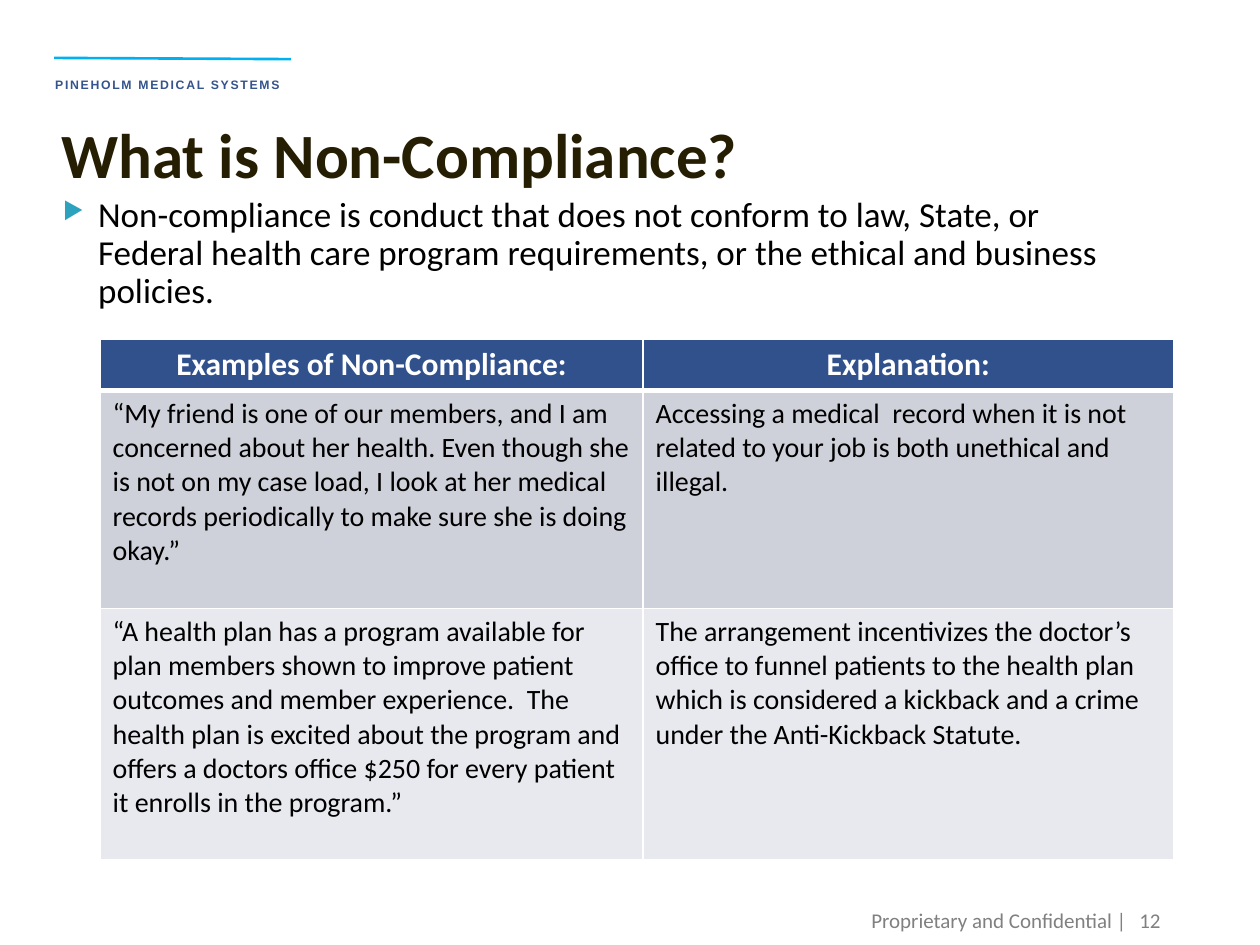
from lxml import etree
from pptx import Presentation
from pptx.dml.color import RGBColor
from pptx.enum.shapes import MSO_CONNECTOR
from pptx.enum.text import MSO_ANCHOR, PP_ALIGN
from pptx.oxml.ns import qn
from pptx.util import Pt

LEFT, CENTER, RIGHT = PP_ALIGN.LEFT, PP_ALIGN.CENTER, PP_ALIGN.RIGHT
TOP, MIDDLE = MSO_ANCHOR.TOP, MSO_ANCHOR.MIDDLE
STRAIGHT = MSO_CONNECTOR.STRAIGHT

WHITE = RGBColor(0xFF, 0xFF, 0xFF)
BLACK = RGBColor(0, 0, 0)
GRAY = RGBColor(0x80, 0x80, 0x80)
BRAND = RGBColor(0x35, 0x53, 0x8D)
SKY = RGBColor(0x00, 0xB0, 0xF0)
TEAL = RGBColor(0x2D, 0xA2, 0xBF)
TITLE = RGBColor(0x26, 0x1E, 0x03)
NAVY = RGBColor(0x31, 0x51, 0x8C)
ROW_DARK = RGBColor(0xCE, 0xD0, 0xDA)
ROW_LIGHT = RGBColor(0xE8, 0xE9, 0xEE)


def write(tf, text, size, color, bold=False, align=LEFT, name="Calibri"):
    p = tf.paragraphs[0]
    p.alignment = align
    r = p.add_run()
    r.text = text
    fmt = {"size": Pt(size), "bold": bold, "name": name}
    for key, value in fmt.items():
        setattr(r.font, key, value)
    r.font.color.rgb = color
    return p


def add_text(box, text, size, color, anchor=TOP, wrap=True, **fmt):
    tf = s.shapes.add_textbox(*(Pt(v) for v in box)).text_frame
    tf.word_wrap = wrap
    tf.vertical_anchor = anchor
    return write(tf, text, size, color, **fmt)


prs = Presentation()
prs.slide_width, prs.slide_height = Pt(720), Pt(540)
s = prs.slides.add_slide(prs.slide_layouts[6])

# Company name with accent line
p = add_text((24.5, 33.1, 147, 21), "PINEHOLM MEDICAL SYSTEMS", 7, BRAND,
             wrap=False, bold=True, name="Arial")
p.line_spacing = Pt(16)
p.runs[0].font._element.set("spc", "100")
line = s.shapes.add_connector(STRAIGHT, Pt(31), Pt(33.1), Pt(166.3), Pt(33.8))
line.line.color.rgb = SKY
line.line.width = Pt(1.5)
etree.SubElement(line._element.spPr, qn("a:effectLst"))

# Footer and page number
for left, width, text in ((407.5, 243.4, "Proprietary and Confidential |"),
                          (637.2, 33.1, "12")):
    add_text((left, 511.2, width, 28.8), text, 12, GRAY, anchor=MIDDLE, align=RIGHT)

# Title
add_text((28.1, 62.6, 468, 51), "What is Non-Compliance?", 36, TITLE, bold=True)

# Bulleted definition
p = add_text((20.2, 109.4, 633.6, 106.6),
             "Non-compliance is conduct that does not conform to law, State, or "
             "Federal health care program requirements, or the ethical and business "
             "policies.", 20, BLACK)
p.line_spacing = 0.9
pPr = p._p.get_or_add_pPr()
pPr.set("marL", str(Pt(28.8)))
pPr.set("indent", str(Pt(-20.2)))
color = etree.SubElement(pPr, qn("a:buClr"))
etree.SubElement(color, qn("a:srgbClr"), val=str(TEAL))
etree.SubElement(pPr, qn("a:buSzPct"), val="68000")
etree.SubElement(pPr, qn("a:buChar"), char="▶")

# Table of examples
rows = (
    ("Examples of Non-Compliance:", "Explanation:"),
    ("“My friend is one of our members, and I am concerned about her health. "
     "Even though she is not on my case load, I look at her medical records "
     "periodically to make sure she is doing okay.”",
     "Accessing a medical  record when it is not related to your job is both "
     "unethical and illegal."),
    ("“A health plan has a program available for plan members shown to improve "
     "patient outcomes and member experience.  The health plan is excited about "
     "the program and offers a doctors office $250 for every patient it enrolls "
     "in the program.”",
     "The arrangement incentivizes the doctor’s office to funnel patients to the "
     "health plan which is considered a kickback and a crime under the "
     "Anti-Kickback Statute."),
)
widths, heights = (310.3, 303.1), (29.2, 124.6, 143.6)
fills = (NAVY, ROW_DARK, ROW_LIGHT)
table = s.shapes.add_table(3, 2, Pt(57.2), Pt(193.9),
                           Pt(sum(widths)), Pt(sum(heights))).table
for col, width in zip(table.columns, widths):
    col.width = Pt(width)

for i, texts in enumerate(rows):
    table.rows[i].height = Pt(heights[i])
    for j, text in enumerate(texts):
        cell = table.cell(i, j)
        cell.fill.solid()
        cell.fill.fore_color.rgb = fills[i]
        if i == 0:
            write(cell.text_frame, text, 18, WHITE, bold=True, align=CENTER)
        else:
            write(cell.text_frame, text, 16, BLACK)

        # White borders, thicker below the header
        tcPr = cell._tc.get_or_add_tcPr()
        for k, side in enumerate(("lnL", "lnR", "lnT", "lnB")):
            thick = (i, side) in ((0, "lnB"), (1, "lnT"))
            ln = etree.Element(qn(f"a:{side}"), w=str(Pt(3 if thick else 1)))
            solid = etree.SubElement(ln, qn("a:solidFill"))
            etree.SubElement(solid, qn("a:srgbClr"), val=str(WHITE))
            tcPr.insert(k, ln)

prs.save("out.pptx")
